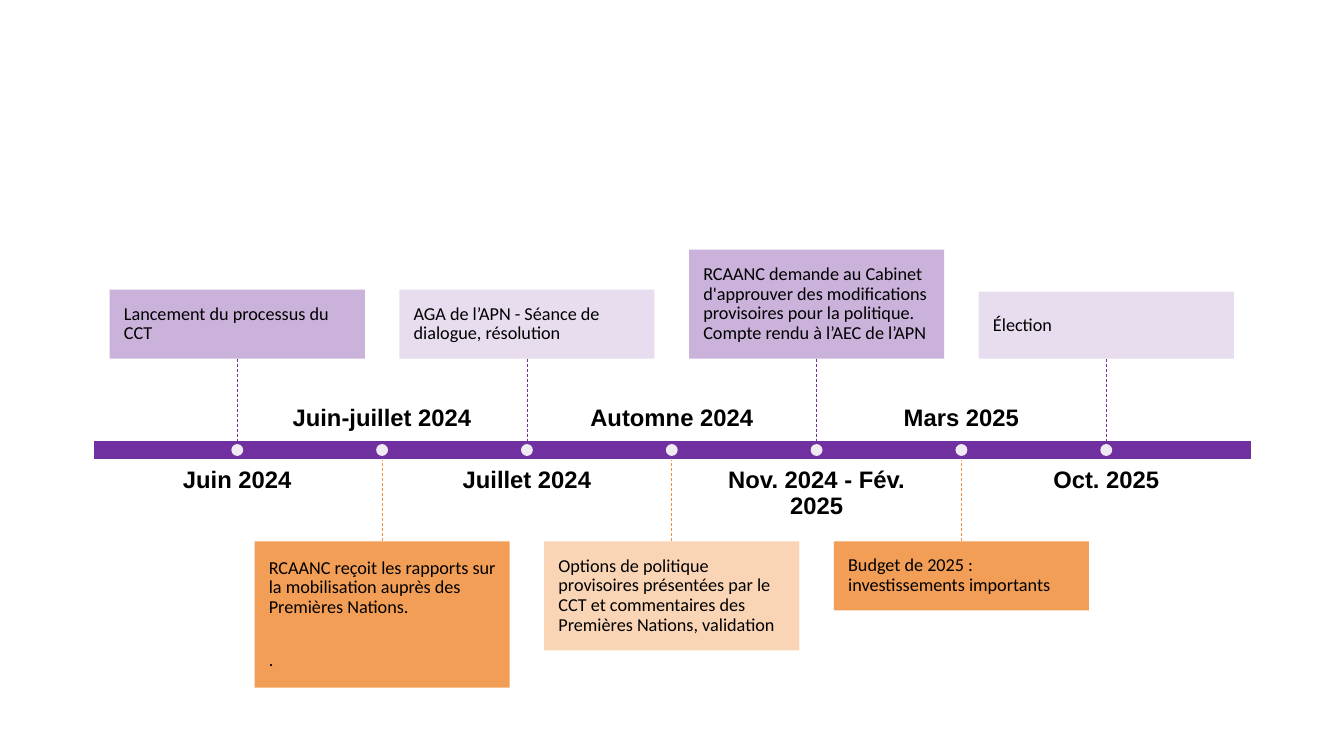
from dataclasses import dataclass
from lxml.etree import SubElement
from pptx import Presentation
from pptx.dml.color import RGBColor
from pptx.enum.dml import MSO_LINE
from pptx.enum.shapes import MSO_CONNECTOR, MSO_SHAPE
from pptx.enum.text import MSO_ANCHOR, PP_ALIGN
from pptx.oxml.ns import qn
from pptx.util import Cm, Pt


@dataclass(frozen=True)
class Theme:
    """Colours, fonts and type sizes of the timeline."""
    purple: str = "7030A0"
    orange: str = "F18B35"
    white: str = "FFFFFF"
    black: str = "000000"
    head: str = "Arial"
    body: str = "Calibri"
    big: int = 17
    small: int = 13
    gap: int = 24


class Board:
    """Draws timeline parts on one slide in one style."""

    def __init__(self, slide, theme):
        self.shapes = slide.shapes
        self.theme = theme

    def text(self, frame, lines, font, size, bold, align, inset, anchor):
        """Fill a text frame with styled paragraphs."""
        frame.word_wrap = True
        frame.vertical_anchor = anchor
        frame.margin_left = frame.margin_right = Cm(inset)
        frame.margin_top = frame.margin_bottom = Cm(inset)
        for i, line in enumerate(lines):
            para = frame.add_paragraph() if i else frame.paragraphs[0]
            para.text = line
            para.alignment = align
            para.line_spacing = 0.9
            para.space_before = Pt(self.theme.gap if i else 0)
            para.font.name = font
            para.font.size = Pt(size)
            para.font.bold = bold
            para.font.color.rgb = RGBColor.from_string(self.theme.black)

    def block(self, kind, left, top, width, height, tint, alpha=100):
        """Add a filled shape without outline."""
        shape = self.shapes.add_shape(kind, Cm(left), Cm(top), Cm(width), Cm(height))
        shape.shadow.inherit = False
        shape.fill.solid()
        shape.fill.fore_color.rgb = RGBColor.from_string(tint)
        shape.line.fill.background()
        if alpha < 100:
            clr = shape.element.spPr.xpath("a:solidFill/a:srgbClr")[0]
            SubElement(clr, qn("a:alpha"), val=str(alpha * 1000))
        return shape

    def bar(self, left, top, width, height):
        """Add the time axis."""
        bar = self.block(MSO_SHAPE.RECTANGLE, left, top, width, height, self.theme.purple)
        bar.line.color.rgb = RGBColor.from_string(self.theme.white)
        bar.line.width = Pt(1)

    def card(self, mid, top, height, lines, tint, alpha):
        """Add an event card centred on its date."""
        card = self.block(MSO_SHAPE.RECTANGLE, mid - CARD / 2, top, CARD, height, tint, alpha)
        self.text(card.text_frame, lines, self.theme.body, self.theme.small, False,
                  PP_ALIGN.LEFT, 0.36, MSO_ANCHOR.MIDDLE)
        return card

    def label(self, mid, top, date, anchor):
        """Add a date beside the axis."""
        box = self.shapes.add_textbox(Cm(mid - LABEL / 2), Cm(top), Cm(LABEL), Cm(1.37))
        self.text(box.text_frame, [date], self.theme.head, self.theme.big, True,
                  PP_ALIGN.CENTER, 0, anchor)

    def stem(self, card, site, mid, start, end, tint):
        """Join a card to the axis with a dashed line."""
        line = self.shapes.add_connector(MSO_CONNECTOR.STRAIGHT, Cm(mid), Cm(start),
                                         Cm(mid), Cm(end))
        line.begin_connect(card, site)
        line.line.color.rgb = RGBColor.from_string(tint)
        line.line.width = Pt(0.5)
        line.line.dash_style = MSO_LINE.DASH
        SubElement(line.element.spPr, qn("a:effectLst"))

    def dot(self, mid, y):
        """Mark a date on the axis."""
        self.block(MSO_SHAPE.OVAL, mid - DOT / 2, y - DOT / 2, DOT, DOT, self.theme.white, 90)


CARD, LABEL, DOT = 6.43, 5.84, 0.3
FIRST, STEP = 5.98, 3.65
AXIS, THICK = 11.1, 0.48
ABOVE, BELOW = 9.04, 13.64
EVENTS = [
    ("Juin 2024", 1.74, 37, ["Lancement du processus du CCT"]),
    ("Juin-juillet 2024", 3.69, 83,
     ["RCAANC reçoit les rapports sur la mobilisation auprès des Premières Nations.", "."]),
    ("Juillet 2024", 1.74, 16, ["AGA de l’APN - Séance de dialogue, résolution"]),
    ("Automne 2024", 2.75, 36,
     ["Options de politique provisoires présentées par le CCT et commentaires des "
      "Premières Nations, validation"]),
    ("Nov. 2024 - Fév. 2025", 2.75, 37,
     ["RCAANC demande au Cabinet d'approuver des modifications provisoires pour la "
      "politique. Compte rendu à l’AEC de l’APN"]),
    ("Mars 2025", 1.74, 83, ["Budget de 2025 : investissements importants"]),
    ("Oct. 2025", 1.69, 16, ["Élection"]),
]


def main():
    """Build the timeline slide."""
    deck = Presentation()
    deck.slide_width, deck.slide_height = Cm(33.87), Cm(19.05)
    theme = Theme()
    board = Board(deck.slides.add_slide(deck.slide_layouts[6]), theme)
    board.bar(2.34, AXIS, 29.21, THICK)
    for i, (date, height, alpha, lines) in enumerate(EVENTS):
        mid = FIRST + i * STEP
        if i % 2:
            card = board.card(mid, BELOW, height, lines, theme.orange, alpha)
            board.stem(card, 0, mid, BELOW, AXIS + THICK, theme.orange)
            board.label(mid, 9.52, date, MSO_ANCHOR.BOTTOM)
        else:
            card = board.card(mid, ABOVE - height, height, lines, theme.purple, alpha)
            board.stem(card, 2, mid, ABOVE, AXIS, theme.purple)
            board.label(mid, 11.79, date, MSO_ANCHOR.TOP)
        board.dot(mid, AXIS + THICK / 2)
    deck.save("out.pptx")


if __name__ == "__main__":
    main()
